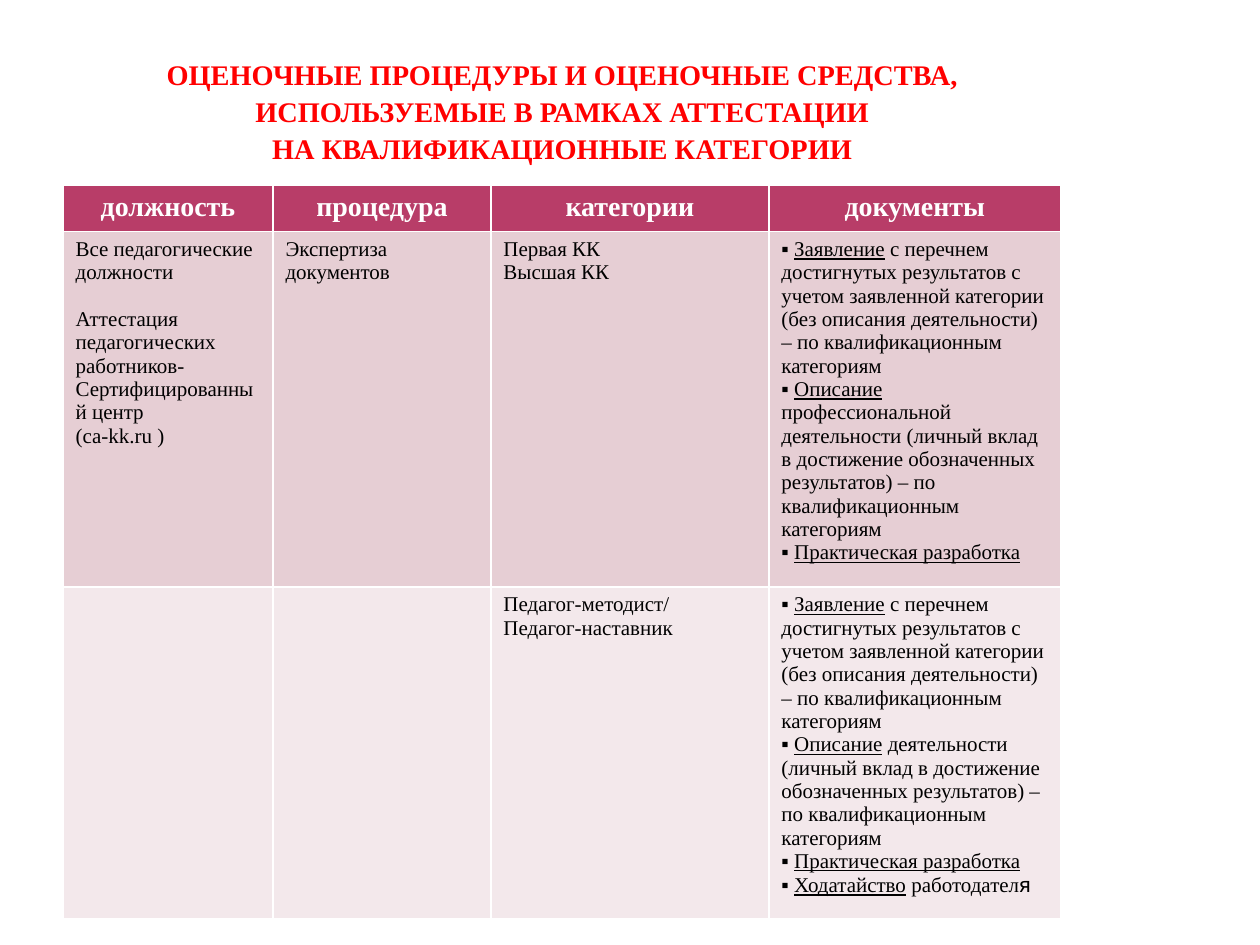
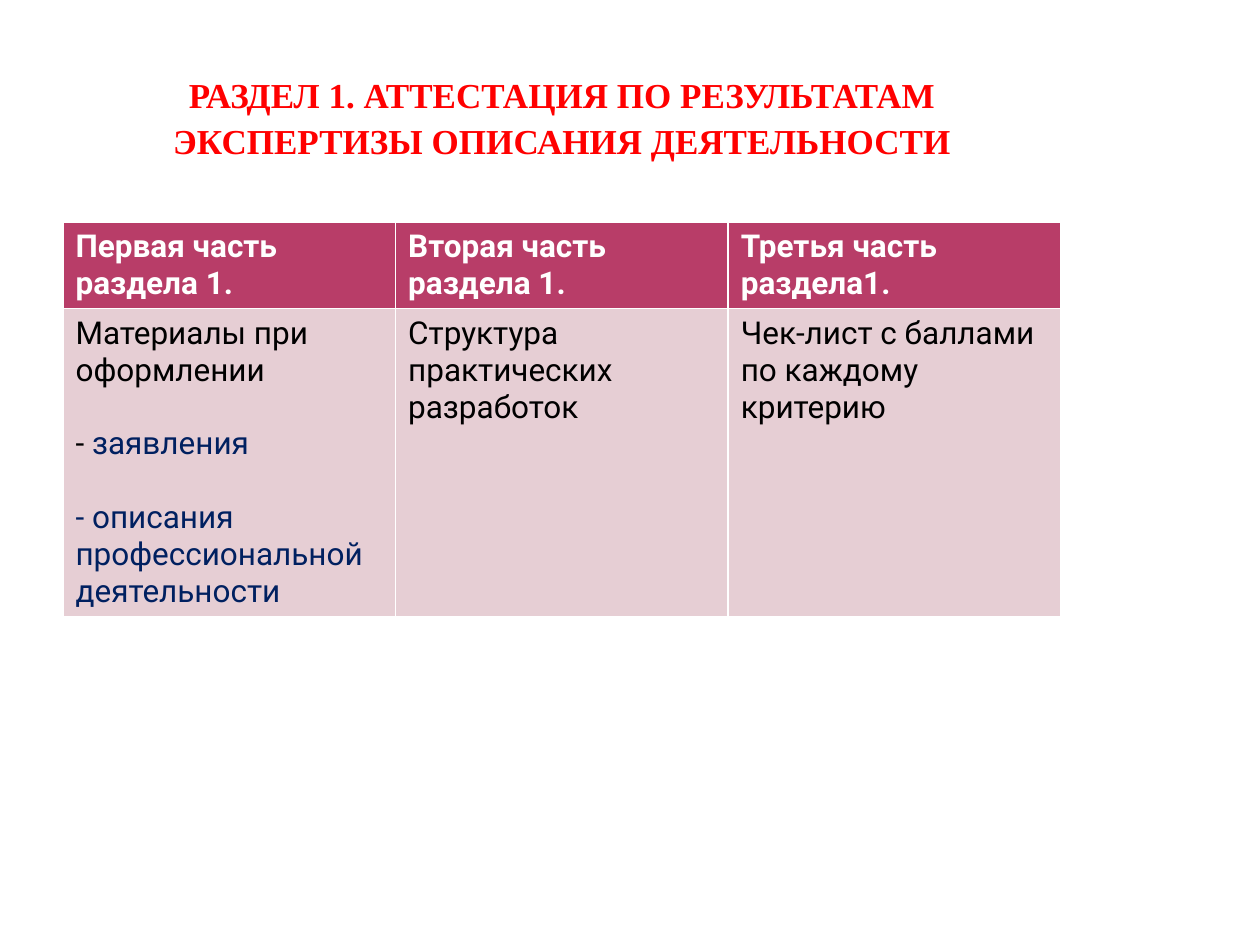
from pptx import Presentation
from pptx.dml.color import RGBColor
from pptx.enum.text import MSO_ANCHOR, MSO_AUTO_SIZE, PP_ALIGN
from pptx.util import Pt

RED = RGBColor(0xFF, 0x00, 0x00)
WHITE = RGBColor(0xFF, 0xFF, 0xFF)
BLACK = RGBColor(0x00, 0x00, 0x00)
NAVY = RGBColor(0x00, 0x20, 0x60)
HEADER_FILL = RGBColor(0xB8, 0x3D, 0x68)
BODY_FILLS = [RGBColor(0xE6, 0xCE, 0xD4), RGBColor(0xF3, 0xE8, 0xEB)]

SERIF, SANS = "Times New Roman", "Roboto"
LEFT, TOP, WIDTH = 36, 25.2, 570.24

UNDERLINED = {"underline": True}
IN_NAVY = {"color": NAVY}
IN_SANS = {"name": SANS}

# A cell is a list of paragraphs; a paragraph is text or a list of runs;
# a run is text or (text, format). GAP leaves one line free before a paragraph.
GAP = "gap"
APPLICATION = ["▪ ", ("Заявление", UNDERLINED),
               " с перечнем достигнутых результатов с учетом заявленной категории "
               "(без описания деятельности) – по квалификационным категориям"]
PRACTICE = ["▪ ", ("Практическая разработка", UNDERLINED)]


def description(subject):
    return ["▪ ", ("Описание", UNDERLINED),
            f" {subject} (личный вклад в достижение обозначенных результатов) "
            "– по квалификационным категориям"]


SLIDES = [
    {
        "title": "ОЦЕНОЧНЫЕ ПРОЦЕДУРЫ И ОЦЕНОЧНЫЕ СРЕДСТВА, ИСПОЛЬЗУЕМЫЕ "
                 "В РАМКАХ АТТЕСТАЦИИ\vНА КВАЛИФИКАЦИОННЫЕ КАТЕГОРИИ",
        "title_size": 16.2, "title_height": 69.1, "title_inset": 0,
        "table_top": 105.8,
        "columns": [120, 124.5, 158.9, 166.84],
        "rows": [26.6, 203, 189.4],
        "font": SERIF, "header_size": 16, "body_size": 12, "line": 13.3,
        "header_align": PP_ALIGN.CENTER,
        "header": ["должность", "процедура", "категории", "документы"],
        "body": [
            [
                ["Все педагогические должности", GAP,
                 "Аттестация педагогических работников- Сертифицированный центр",
                 "(са-kk.ru )"],
                ["Экспертиза документов"],
                ["Первая КК", "Высшая КК"],
                [APPLICATION, description("профессиональной деятельности"), PRACTICE],
            ],
            [
                [],
                [],
                ["Педагог-методист/", "Педагог-наставник"],
                [APPLICATION, description("деятельности"), PRACTICE,
                 ["▪ ", ("Ходатайство", UNDERLINED), " работодател", ("я", IN_SANS)]],
            ],
        ],
    },
    {
        "title": "РАЗДЕЛ 1. АТТЕСТАЦИЯ ПО РЕЗУЛЬТАТАМ ЭКСПЕРТИЗЫ ОПИСАНИЯ ДЕЯТЕЛЬНОСТИ",
        "title_size": 20, "title_height": 90, "title_inset": 23,
        "table_top": 126.9,
        "columns": [WIDTH / 3] * 3,
        "rows": [49.4, 175.9],
        "font": SANS, "header_size": 18, "body_size": 18, "line": 21.1,
        "header_align": PP_ALIGN.LEFT,
        "header": ["Первая часть раздела 1.", "Вторая часть раздела 1.",
                   "Третья часть раздела1."],
        "body": [
            [
                ["Материалы при оформлении", GAP,
                 ["- ", ("заявления", IN_NAVY)], GAP,
                 [("- описания профессиональной деятельности", IN_NAVY)]],
                ["Структура практических разработок"],
                ["Чек-лист с баллами по каждому критерию"],
            ],
        ],
    },
]


def format_font(font, values):
    for attribute, value in values.items():
        if attribute == "color":
            font.color.rgb = value
        else:
            setattr(font, attribute, value)


def add_title(slide, content):
    title = slide.shapes.title
    place = {"left": LEFT, "top": TOP, "width": WIDTH, "height": content["title_height"]}
    for side, length in place.items():
        setattr(title, side, Pt(length))
    frame = title.text_frame
    frame_format = {
        "text": content["title"], "word_wrap": True,
        "auto_size": MSO_AUTO_SIZE.NONE, "vertical_anchor": MSO_ANCHOR.BOTTOM,
        "margin_left": Pt(3.6), "margin_right": Pt(3.6),
        "margin_top": 0, "margin_bottom": Pt(content["title_inset"]),
    }
    for attribute, value in frame_format.items():
        setattr(frame, attribute, value)
    paragraph = frame.paragraphs[0]
    paragraph.alignment = PP_ALIGN.CENTER
    paragraph.line_spacing = 1.08
    for run in paragraph.runs:
        format_font(run.font, {"name": SERIF, "size": Pt(content["title_size"]),
                               "bold": True, "color": RED})


def fill_cell(cell, paragraphs, fill, base, align, line):
    cell.fill.solid()
    cell.fill.fore_color.rgb = fill
    paragraph = cell.text_frame.paragraphs[0]
    format_font(paragraph.font, base)
    space, first = 0, True
    for runs in paragraphs:
        if runs == GAP:
            space = line
            continue
        if not first:
            paragraph = cell.text_frame.add_paragraph()
            paragraph.space_before = Pt(space)
        paragraph.alignment = align
        for part in [runs] if isinstance(runs, str) else runs:
            text, changes = (part, {}) if isinstance(part, str) else part
            run = paragraph.add_run()
            run.text = text
            format_font(run.font, {**base, **changes})
        space, first = 0, False


def add_grid(slide, content):
    table_rows = [[[label] for label in content["header"]]] + content["body"]
    table = slide.shapes.add_table(
        len(table_rows), len(content["columns"]), Pt(LEFT), Pt(content["table_top"]),
        Pt(WIDTH), Pt(sum(content["rows"]))).table
    for column, width in zip(table.columns, content["columns"]):
        column.width = Pt(width)
    for row, height in zip(table.rows, content["rows"]):
        row.height = Pt(height)

    header_font = {"name": content["font"], "size": Pt(content["header_size"]),
                   "bold": True, "color": WHITE}
    body_font = {"name": content["font"], "size": Pt(content["body_size"]),
                 "bold": False, "color": BLACK}
    styles = [(HEADER_FILL, header_font, content["header_align"])]
    styles += [(fill, body_font, PP_ALIGN.LEFT) for fill in BODY_FILLS]
    for row, cells, style in zip(table.rows, table_rows, styles):
        for cell, paragraphs in zip(row.cells, cells):
            fill_cell(cell, paragraphs, *style, content["line"])


def main():
    presentation = Presentation()
    presentation.slide_width, presentation.slide_height = Pt(720), Pt(540)
    title_only = presentation.slide_layouts[5]
    for content in SLIDES:
        slide = presentation.slides.add_slide(title_only)
        add_title(slide, content)
        add_grid(slide, content)
    presentation.save("out.pptx")


if __name__ == "__main__":
    main()
